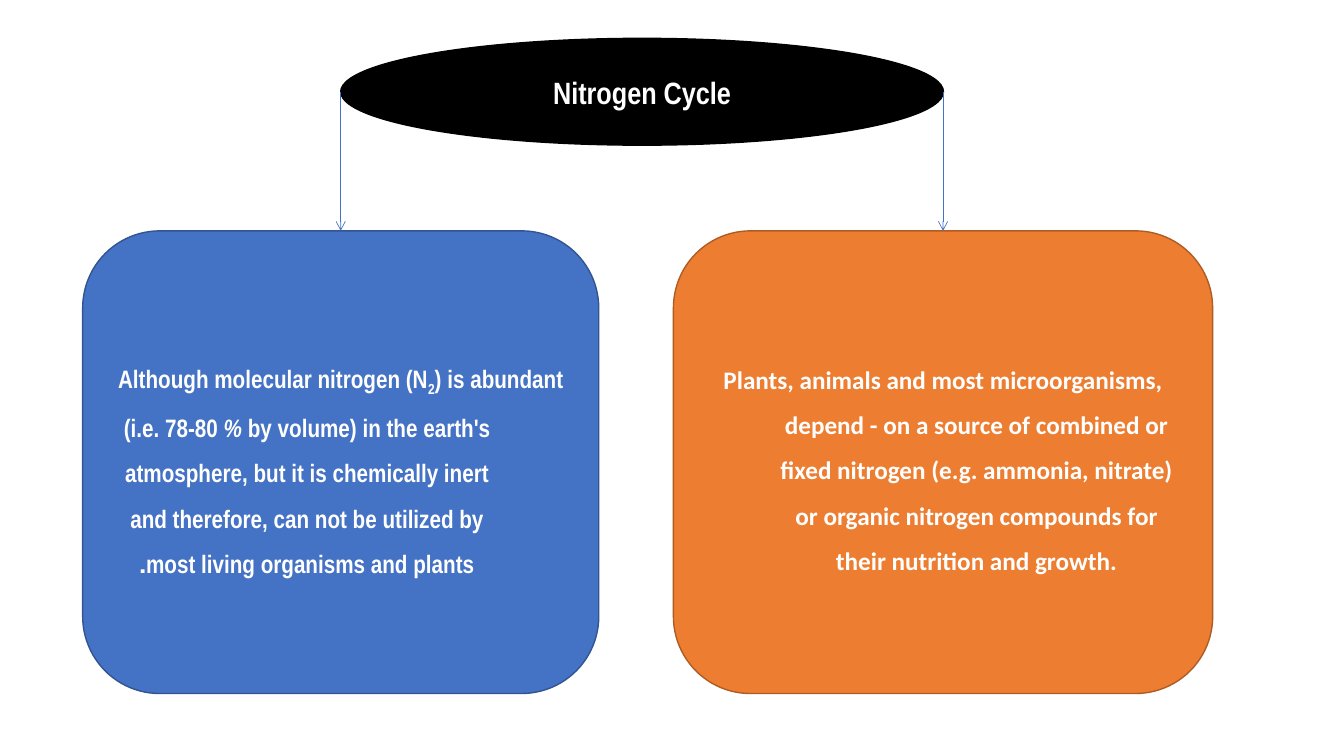
from typing import NamedTuple

from pptx import Presentation
from pptx.dml.color import RGBColor
from pptx.enum.shapes import MSO_CONNECTOR, MSO_SHAPE
from pptx.enum.text import MSO_ANCHOR, PP_ALIGN
from pptx.oxml.ns import qn
from pptx.oxml.xmlchemy import OxmlElement
from pptx.shapes.autoshape import Shape
from pptx.shapes.shapetree import SlideShapes
from pptx.util import Pt

BLACK = RGBColor(0x00, 0x00, 0x00)
WHITE = RGBColor(0xFF, 0xFF, 0xFF)
BLUE = RGBColor(0x44, 0x72, 0xC4)
NAVY = RGBColor(0x32, 0x54, 0x91)
ORANGE = RGBColor(0xED, 0x7D, 0x31)
RUST = RGBColor(0xAF, 0x5C, 0x24)

HANG = Pt(48)
TOP, HEIGHT = 164.9, 330.5


class Span(NamedTuple):
    text: str
    italic: bool = False
    sub: bool = False


class Node(NamedTuple):
    kind: MSO_SHAPE
    left: float
    top: float
    width: float
    height: float
    fill: RGBColor
    edge: RGBColor
    font: str
    size: float
    space: float
    spans: list[Span]
    rtl: bool = False


TITLE = Node(MSO_SHAPE.OVAL, 243.36, 27.4, 430.56, 76.3, BLACK, BLACK,
             "Arial Narrow", 22, 1, [Span("Nitrogen Cycle")])

BOXES = [
    Node(MSO_SHAPE.ROUNDED_RECTANGLE, 59.04, TOP, 368.64, HEIGHT, BLUE, NAVY,
         "Arial Narrow", 18, 1.5, [
             Span("Although molecular nitrogen (N"),
             Span("2", sub=True),
             Span(") is abundant (i.e. 78-80 "),
             Span("% ", italic=True),
             Span("by volume) in the earth's atmosphere, but it is chemically "
                  "inert and therefore, can not be utilized by most living "
                  "organisms and plants."),
         ], rtl=True),
    Node(MSO_SHAPE.ROUNDED_RECTANGLE, 481, TOP, 385.2, HEIGHT, ORANGE, RUST,
         "Calibri", 18, 1.5, [
             Span("Plants, animals and most microorganisms, depend - on a "
                  "source of combined or fixed nitrogen (e.g. ammonia, nitrate) "
                  "or organic nitrogen compounds for their nutrition and growth."),
         ]),
]


def add_node(shapes: SlideShapes, node: Node) -> Shape:
    shape = shapes.add_shape(node.kind, Pt(node.left), Pt(node.top),
                             Pt(node.width), Pt(node.height))
    shape.shadow.inherit = False
    shape.fill.solid()
    shape.fill.fore_color.rgb = node.fill
    shape.line.color.rgb = node.edge
    shape.line.width = Pt(1)

    frame = shape.text_frame
    frame.word_wrap = True
    frame.vertical_anchor = MSO_ANCHOR.MIDDLE
    para = frame.paragraphs[0]
    para.alignment = PP_ALIGN.CENTER
    para.line_spacing = node.space
    # Hanging indent and reading direction
    props = para._p.get_or_add_pPr()
    props.set("marL", str(HANG))
    props.set("indent", str(-HANG))
    if node.rtl:
        props.set("rtl", "1")

    for span in node.spans:
        run = para.add_run()
        run.text = span.text
        run.font.name = node.font
        run.font.size = Pt(node.size)
        run.font.bold = True
        run.font.italic = span.italic
        run.font.color.rgb = WHITE
        if span.sub:
            run._r.get_or_add_rPr().set("baseline", "-25000")
    return shape


def add_arrow(shapes: SlideShapes, start: Shape, box: Shape) -> None:
    mid = box.left + box.width // 2
    arrow = shapes.add_connector(MSO_CONNECTOR.STRAIGHT, mid,
                                 start.top + start.height // 2, mid, box.top)
    arrow.end_connect(box, 0)
    arrow.line.color.rgb = BLUE
    arrow.line.width = Pt(0.5)
    # Open arrowhead, no shadow
    props = arrow._element.spPr
    head = OxmlElement("a:tailEnd")
    head.set("type", "arrow")
    props.find(qn("a:ln")).append(head)
    props.append(OxmlElement("a:effectLst"))


def main() -> None:
    deck = Presentation()
    deck.slide_width, deck.slide_height = Pt(960), Pt(540)
    shapes = deck.slides.add_slide(deck.slide_layouts[6]).shapes

    # Title and the two boxes
    title = add_node(shapes, TITLE)
    boxes = [add_node(shapes, node) for node in BOXES]

    # Arrows down to the boxes
    for box in boxes:
        add_arrow(shapes, title, box)

    deck.save("out.pptx")


if __name__ == "__main__":
    main()
